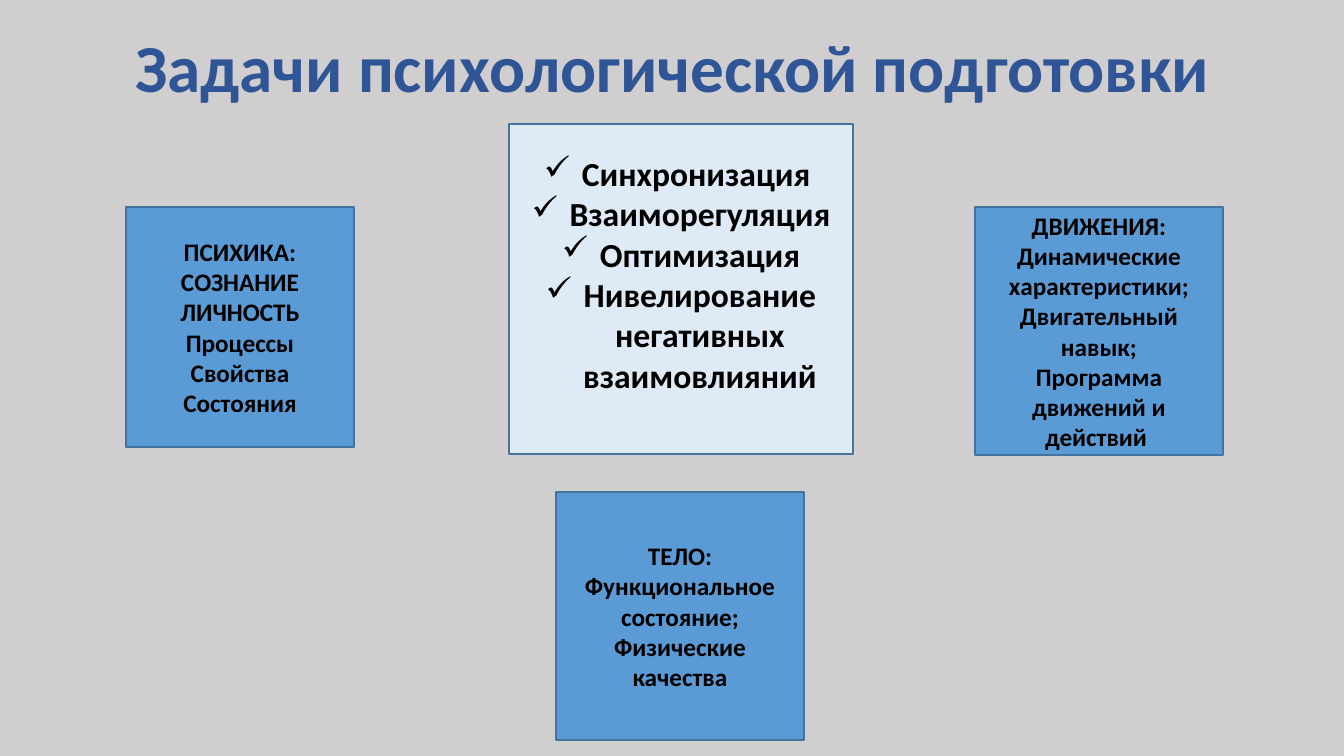
"""Build the slide on the tasks of psychological training."""
from lxml.etree import SubElement
from pptx import Presentation
from pptx.dml.color import RGBColor
from pptx.enum.shapes import MSO_SHAPE
from pptx.enum.text import MSO_ANCHOR, PP_ALIGN
from pptx.oxml.ns import qn
from pptx.util import Emu, Pt

PX = 914400 / 100.8


def px(*values):
    return [Emu(round(v * PX)) for v in values]


def paint(fmt, color):
    if hasattr(fmt, "solid"):
        fmt.solid()
        fmt.fore_color.rgb = RGBColor.from_string(color)
    else:
        fmt.color.rgb = RGBColor.from_string(color)


prs = Presentation()
prs.slide_width, prs.slide_height = px(1344, 756)
s = prs.slides.add_slide(prs.slide_layouts[5])
paint(s.background.fill, "D0CECE")

title = s.shapes.title
title.left, title.top, title.width, title.height = px(93, 21, 1159, 99)
tf = title.text_frame
tf.text = "Задачи психологической подготовки"
tf.vertical_anchor = MSO_ANCHOR.MIDDLE
p = tf.paragraphs[0]
p.alignment = PP_ALIGN.CENTER
p.line_spacing = 0.9
r = p.runs[0]
r.font.name, r.font.size, r.font.bold = "Calibri", Pt(48), True
paint(r.font, "2F5597")

boxes = [
    ((126, 207, 228, 240), "5B9BD5", 18, False,
     ["ПСИХИКА:", "СОЗНАНИЕ", "ЛИЧНОСТЬ", "Процессы", "Свойства", "Состояния"]),
    ((556, 492, 248, 248), "5B9BD5", 18, False,
     ["ТЕЛО:", "Функциональное состояние;", "Физические качества"]),
    ((975, 207, 248, 248), "5B9BD5", 18, False,
     ["ДВИЖЕНИЯ:", "Динамические характеристики;", "Двигательный навык;",
      "Программа движений и действий "]),
    ((509, 124, 344, 330), "DEEBF7", 24, True,
     ["Синхронизация ", "Взаиморегуляция", "Оптимизация",
      "Нивелирование негативных взаимовлияний"]),
]
for place, fill, size, checked, lines in boxes:
    sp = s.shapes.add_shape(MSO_SHAPE.RECTANGLE, *px(*place))
    sp.shadow.inherit = False
    paint(sp.fill, fill)
    paint(sp.line, "43739E")
    sp.line.width = Pt(1)
    tf = sp.text_frame
    tf.word_wrap = True
    tf.vertical_anchor = MSO_ANCHOR.MIDDLE
    tf.text = "\n".join(lines)
    if checked:
        tf.margin_bottom = px(35)[0]
    for p in tf.paragraphs:
        p.alignment = PP_ALIGN.CENTER
        r = p.runs[0]
        r.font.name, r.font.size, r.font.bold = "Calibri", Pt(size), True
        paint(r.font, "000000")
        if checked:
            pPr = p._p.get_or_add_pPr()
            indent = px(38)[0]
            pPr.set("marL", str(indent))
            pPr.set("indent", str(-indent))
            SubElement(pPr, qn("a:buChar")).set("char", "✓")

prs.save("out.pptx")
